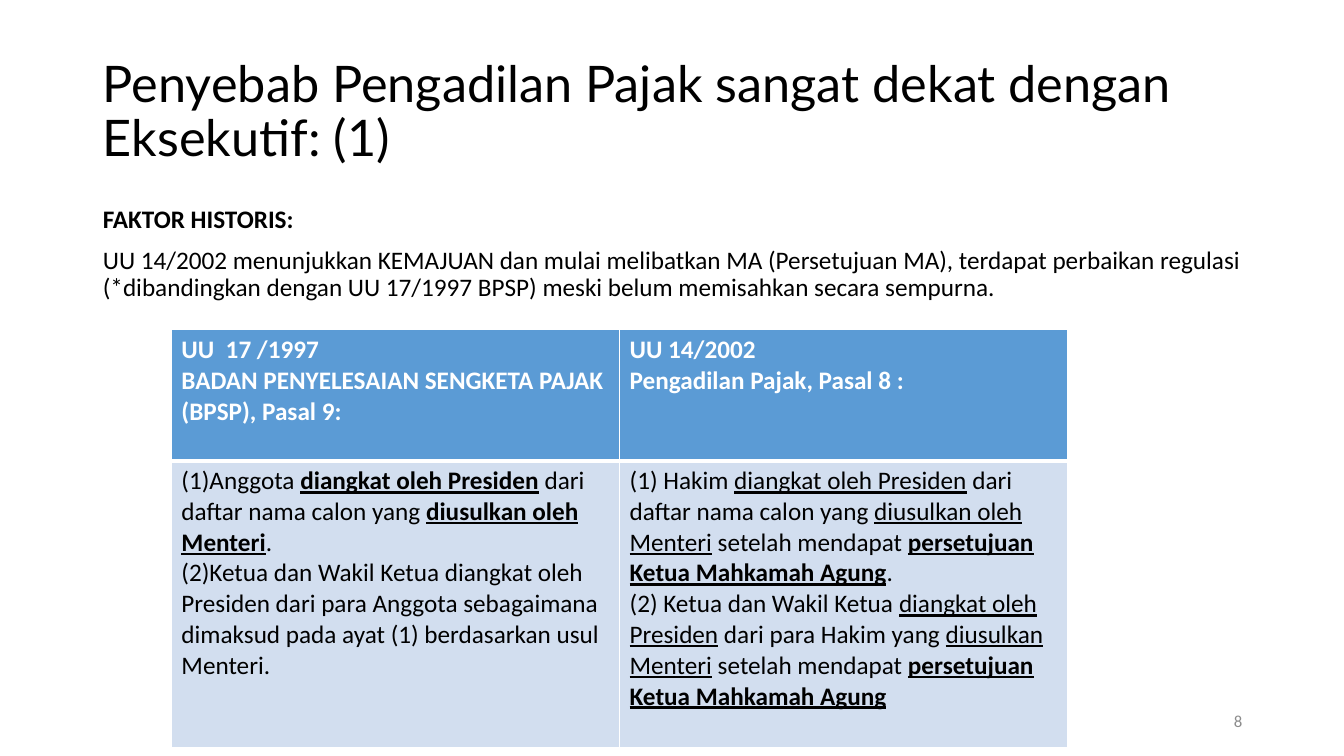
from lxml.etree import SubElement
from pptx import Presentation
from pptx.dml.color import RGBColor
from pptx.enum.text import MSO_ANCHOR, MSO_AUTO_SIZE, PP_ALIGN
from pptx.oxml.ns import qn
from pptx.util import Inches, Pt

COLORS = {
    "text": "000000",
    "white": "FFFFFF",
    "number": "8C8C8C",
    "header": "5B9BD5",
    "body": "D2DEEF",
}

HEADINGS = [
    ["UU  17 /1997", "BADAN PENYELESAIAN SENGKETA PAJAK (BPSP), Pasal 9:"],
    ["UU 14/2002", "Pengadilan Pajak, Pasal 8 :"],
]
BOLD_UNDERLINE = {"bold": True, "underline": True}
UNDERLINE = {"underline": True}
APPROVAL = ("persetujuan Ketua Mahkamah Agung", BOLD_UNDERLINE)
ARTICLES = [
    [
        [
            ("(1)Anggota ", {}),
            ("diangkat oleh Presiden", BOLD_UNDERLINE),
            (" dari daftar nama calon yang ", {}),
            ("diusulkan oleh Menteri", BOLD_UNDERLINE),
            (".", {}),
        ],
        "(2)Ketua dan Wakil Ketua diangkat oleh Presiden dari para Anggota "
        "sebagaimana dimaksud pada ayat (1) berdasarkan usul Menteri.",
    ],
    [
        [
            ("(1) Hakim ", {}),
            ("diangkat oleh Presiden", UNDERLINE),
            (" dari daftar nama calon yang ", {}),
            ("diusulkan oleh Menteri", UNDERLINE),
            (" setelah mendapat ", {}),
            APPROVAL,
            (".", {}),
        ],
        [
            ("(2) Ketua dan Wakil Ketua ", {}),
            ("diangkat oleh Presiden", UNDERLINE),
            (" dari para Hakim yang ", {}),
            ("diusulkan Menteri", UNDERLINE),
            (" setelah mendapat ", {}),
            APPROVAL,
        ],
    ],
]


def write(paragraph, text, size=18, font="Calibri", color="text", bold=False,
          underline=False, align=PP_ALIGN.LEFT, spacing=None, before=0):
    paragraph.alignment = align
    paragraph.line_spacing = spacing
    paragraph.space_before = Pt(before)
    runs = [(text, {})] if isinstance(text, str) else text
    for words, emphasis in runs:
        run = paragraph.add_run()
        run.text = words
        run.font.size = Pt(size)
        run.font.name = font
        run.font.color.rgb = RGBColor.from_string(COLORS[color])
        run.font.bold = emphasis.get("bold", bold)
        run.font.underline = emphasis.get("underline", underline)


def write_all(frame, texts, **style):
    for index, text in enumerate(texts):
        paragraph = frame.add_paragraph() if index else frame.paragraphs[0]
        write(paragraph, text, **style)


class Deck:
    def __init__(self):
        self.presentation = Presentation()
        self.presentation.slide_width = Inches(13.33)
        self.presentation.slide_height = Inches(7.5)
        layout = self.presentation.slide_layouts[1]
        self.slide = self.presentation.slides.add_slide(layout)

    def place(self, holder, box, anchor):
        holder.left, holder.top, holder.width, holder.height = map(Inches, box)
        frame = holder.text_frame
        frame.word_wrap = True
        frame.auto_size = MSO_AUTO_SIZE.NONE
        frame.vertical_anchor = anchor
        return frame

    def title(self, text, box):
        frame = self.place(self.slide.shapes.title, box, MSO_ANCHOR.MIDDLE)
        write(frame.paragraphs[0], text, size=36, font="Lato", spacing=0.9)

    def body(self, heading, statement, box):
        frame = self.place(self.slide.placeholders[1], box, MSO_ANCHOR.TOP)
        write(frame.paragraphs[0], heading, bold=True, spacing=0.9, before=10)
        write(frame.add_paragraph(), statement, spacing=0.9, before=10)
        for paragraph in frame.paragraphs:
            properties = paragraph._p.get_or_add_pPr()
            properties.set("marL", "0")
            properties.set("indent", "0")
            SubElement(properties, qn("a:buNone"))

    def page_number(self, text, box):
        holder = self.slide.shapes.add_textbox(0, 0, 0, 0)
        frame = self.place(holder, box, MSO_ANCHOR.MIDDLE)
        write(frame.paragraphs[0], text, size=12, color="number",
              align=PP_ALIGN.RIGHT)

    def border(self, cell, widths):
        properties = cell._tc.get_or_add_tcPr()
        for side, width in zip("LRTB", widths):
            line = SubElement(properties, qn(f"a:ln{side}"), w=str(Pt(width)))
            fill = SubElement(line, qn("a:solidFill"))
            SubElement(fill, qn("a:srgbClr"), val=COLORS["white"])

    def comparison(self, headings, articles, box, heights):
        table = self.slide.shapes.add_table(
            2, len(headings), *map(Inches, box)).table
        table.horz_banding = False
        for row, height in zip(table.rows, heights):
            row.height = Inches(height)
        rows = [
            (headings, "header", {"color": "white", "bold": True}, (1, 1, 1, 3)),
            (articles, "body", {}, (1, 1, 3, 1)),
        ]
        for row, (contents, fill, style, widths) in enumerate(rows):
            for column, texts in enumerate(contents):
                cell = table.cell(row, column)
                self.border(cell, widths)
                cell.fill.solid()
                cell.fill.fore_color.rgb = RGBColor.from_string(COLORS[fill])
                write_all(cell.text_frame, texts, **style)


def main():
    deck = Deck()
    deck.title("Penyebab Pengadilan Pajak sangat dekat dengan Eksekutif: (1)",
               (0.92, 0.4, 11.5, 1.45))
    deck.body("FAKTOR HISTORIS:",
              "UU 14/2002 menunjukkan KEMAJUAN dan mulai melibatkan MA "
              "(Persetujuan MA), terdapat perbaikan regulasi (*dibandingkan "
              "dengan UU 17/1997 BPSP) meski belum memisahkan secara sempurna.",
              (0.92, 2, 11.5, 4.76))
    deck.page_number("8", (9.42, 6.95, 3, 0.4))
    deck.comparison(HEADINGS, ARTICLES, (1.7, 3.27, 8.89, 4.15), (1.3, 2.85))
    deck.presentation.save("out.pptx")


if __name__ == "__main__":
    main()
